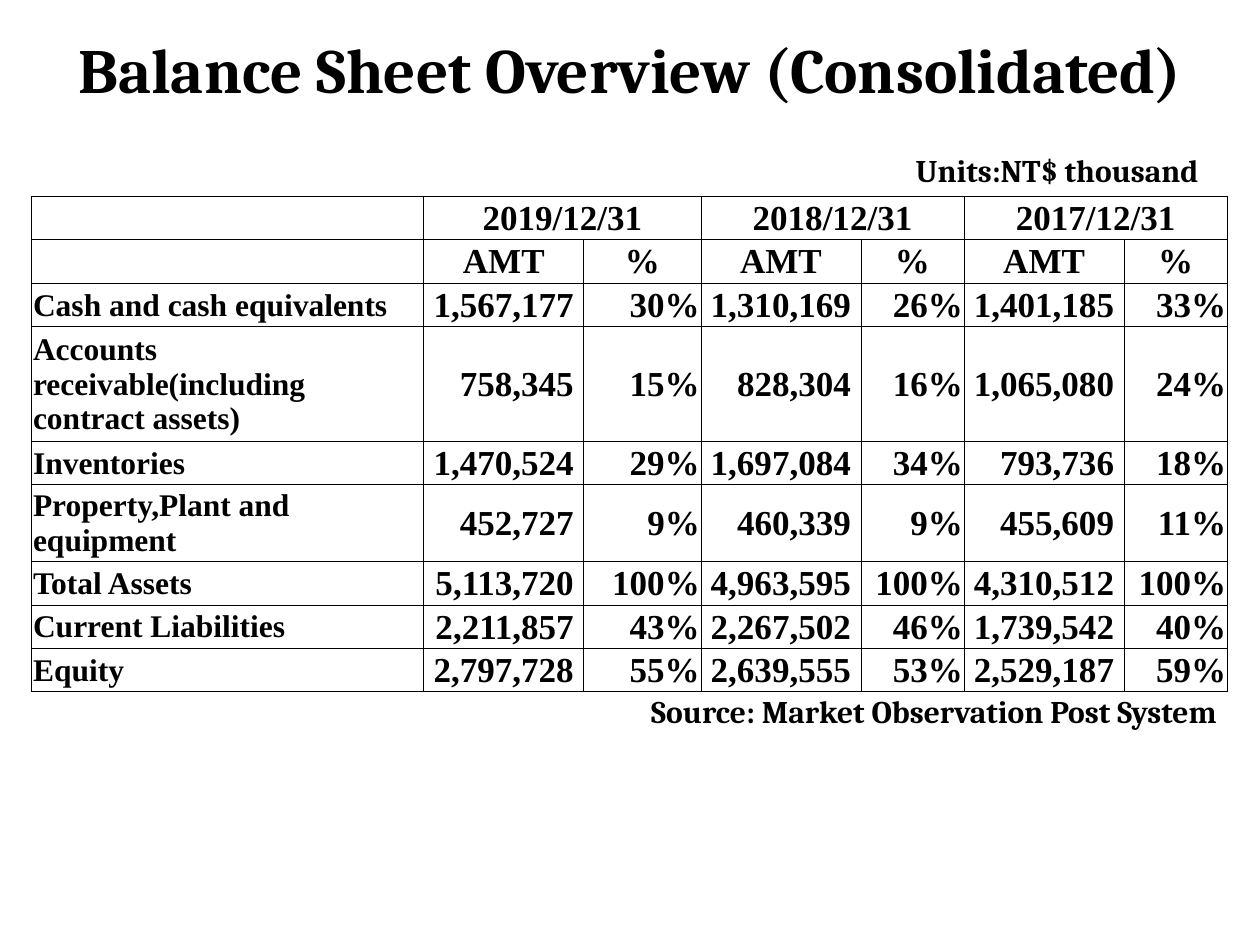
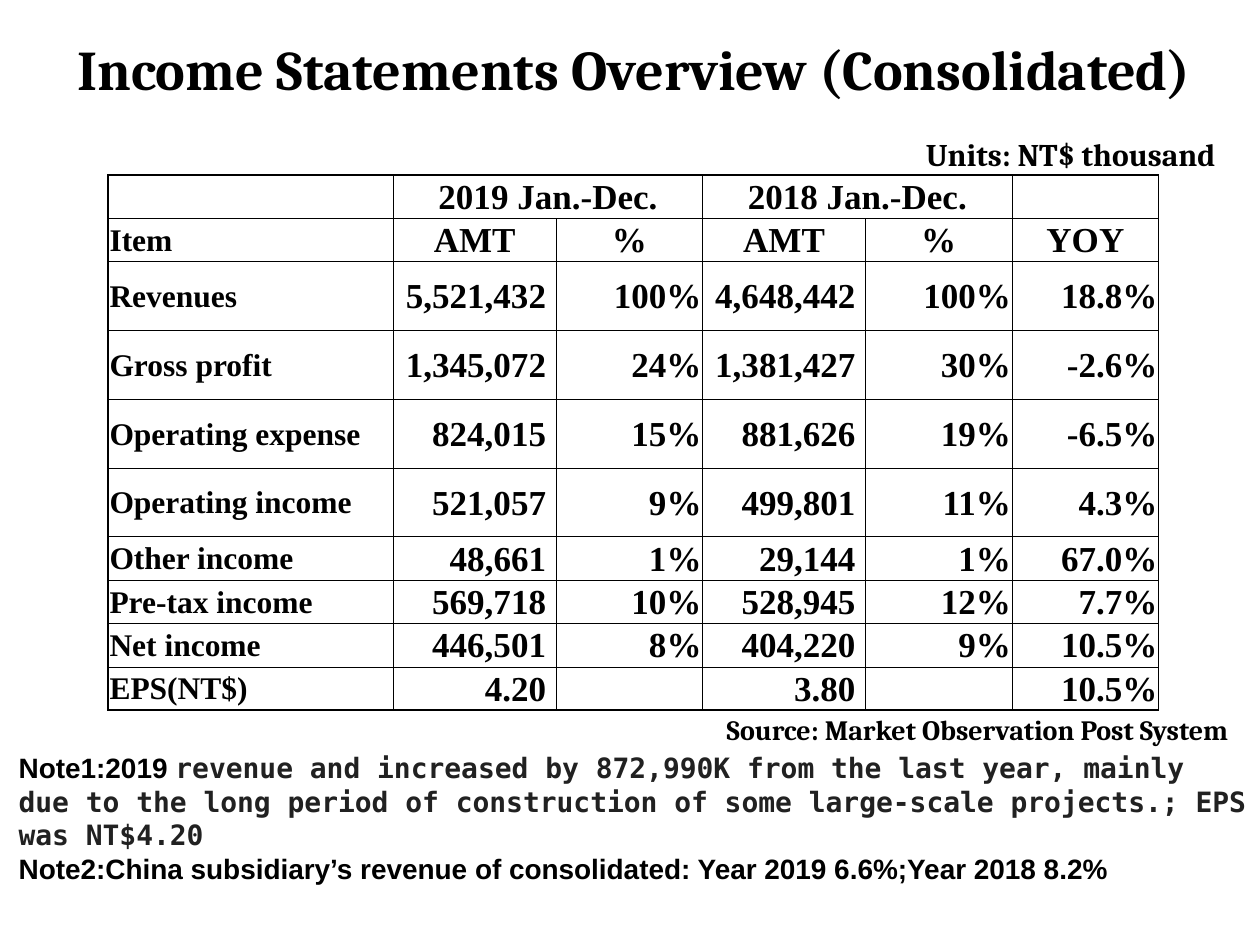
from dataclasses import dataclass
from lxml import etree
from pptx import Presentation
from pptx.dml.color import RGBColor
from pptx.enum import text as t
from pptx.oxml.ns import qn
from pptx.util import Pt


@dataclass(frozen=True)
class Theme:
    ink: str = "000000"
    soft_ink: str = "212121"
    heading: str = "Cambria"
    figures: str = "Times New Roman"
    remark: str = "Arial"
    mono: str = "DejaVu Sans Mono"
    caption: int = 18
    label: int = 18
    figure: int = 20
    small: int = 16
    thin: float = 0.5
    thick: float = 1.5
    inset: float = 0.7
    amount_gap: float = 5.7
    row: float = 24.8


THEME = Theme()
SOURCE = "Source: Market Observation Post System"

BALANCE = {
    "title": ("Balance Sheet Overview (Consolidated)", 36, 691.2),
    "units": ("Units:NT$ thousand", THEME.caption, (516.2, 82.8, 190.8, 28.8)),
    "source": (SOURCE, THEME.caption, (365, 391.7, 370.8, 28.8)),
    "origin": (18.2, 112.2),
    "columns": [224, 91.4, 67, 91.4, 59, 91.4, 59],
    "heights": {3: 65.6, 5: 44},
    "thick_sides": "",
    "periods": ["2019/12/31", "2018/12/31", "2017/12/31"],
    "rows": [
        ["", "AMT", "%", "AMT", "%", "AMT", "%"],
        ["Cash and cash equivalents", "1,567,177", "30%", "1,310,169", "26%", "1,401,185", "33%"],
        ["Accounts receivable(including contract assets)",
         "758,345", "15%", "828,304", "16%", "1,065,080", "24%"],
        ["Inventories", "1,470,524", "29%", "1,697,084", "34%", "793,736", "18%"],
        ["Property,Plant and equipment", "452,727", "9%", "460,339", "9%", "455,609", "11%"],
        ["Total Assets", "5,113,720", "100%", "4,963,595", "100%", "4,310,512", "100%"],
        ["Current Liabilities", "2,211,857", "43%", "2,267,502", "46%", "1,739,542", "40%"],
        ["Equity", "2,797,728", "55%", "2,639,555", "53%", "2,529,187", "59%"],
    ],
}

INCOME = {
    "title": ("Income Statements Overview (Consolidated)", 32, 696.2),
    "units": ("Units: NT$ thousand", THEME.caption, (522, 73.4, 198.7, 28.8)),
    "source": (SOURCE, THEME.small, (408.2, 403.9, 312.5, 26.6)),
    "origin": (61.9, 100.1),
    "columns": [162.9, 93, 83.8, 93, 83.8, 83.8],
    "heights": dict.fromkeys(range(2, 6), 39.3),
    "thick_sides": "LTB",
    "periods": ["2019 Jan.-Dec.", "2018 Jan.-Dec."],
    "rows": [
        ["Item", "AMT", "%", "AMT", "%", "YOY"],
        ["Revenues", "5,521,432", "100%", "4,648,442", "100%", "18.8%"],
        ["Gross profit", "1,345,072", "24%", "1,381,427", "30%", "-2.6%"],
        ["Operating expense", "824,015", "15%", "881,626", "19%", "-6.5%"],
        ["Operating income", "521,057", "9%", "499,801", "11%", "4.3%"],
        ["Other income", "48,661", "1%", "29,144", "1%", "67.0%"],
        ["Pre-tax income", "569,718", "10%", "528,945", "12%", "7.7%"],
        ["Net income", "446,501", "8%", "404,220", "9%", "10.5%"],
        ["EPS(NT$)", "4.20", "", "3.80", "", "10.5%"],
    ],
}

REMARKS_BOX = (3.6, 425.5, 717.1, 108.7)
REMARKS = [
    [("Note1:2019 ", THEME.remark, THEME.ink),
     ("revenue and increased by 872,990K from the last year, mainly due to the long period "
      "of construction of some large-scale projects.; EPS was NT$4.20",
      THEME.mono, THEME.soft_ink)],
    [("Note2:China subsidiary’s revenue of consolidated: Year 2019 6.6%;Year 2018 8.2%",
      THEME.remark, THEME.ink)],
]


def style(font, name, size=None, color=THEME.ink):
    font.name = name
    font.bold = True
    font.color.rgb = RGBColor.from_string(color)
    if size:
        font.size = Pt(size)


def add_title(slide, words, size, width):
    title = slide.shapes.title
    title.left, title.top, title.width, title.height = map(Pt, (14.4, 12.2, width, 54))
    frame = title.text_frame
    frame.text = words
    frame.auto_size = t.MSO_AUTO_SIZE.NONE
    frame.vertical_anchor = t.MSO_ANCHOR.MIDDLE
    frame.paragraphs[0].alignment = t.PP_ALIGN.CENTER
    style(frame.paragraphs[0].font, THEME.heading, size)


def add_frame(slide, box):
    frame = slide.shapes.add_textbox(*map(Pt, box)).text_frame
    frame.word_wrap = True
    return frame


def add_caption(slide, words, size, box):
    line = add_frame(slide, box).paragraphs[0]
    line.text = words
    style(line.font, THEME.heading, size)


def rule_cell(cell, thick_sides):
    props = cell._tc.get_or_add_tcPr()
    for side in "LRTB":
        width = THEME.thick if side in thick_sides else THEME.thin
        rule = etree.SubElement(props, qn(f"a:ln{side}"), w=str(Pt(width)))
        fill = etree.SubElement(rule, qn("a:solidFill"))
        etree.SubElement(fill, qn("a:srgbClr"), val=THEME.ink)
    cell.fill.background()


def fill_cell(cell, words, row, col, is_amount):
    cell.margin_left = cell.margin_top = cell.margin_right = Pt(THEME.inset)
    cell.margin_bottom = 0
    cell.vertical_anchor = t.MSO_ANCHOR.MIDDLE
    line = cell.text_frame.paragraphs[0]
    line.text = words
    if col == 0:
        line.alignment = t.PP_ALIGN.LEFT
    elif row < 2:
        line.alignment = t.PP_ALIGN.CENTER
    else:
        line.alignment = t.PP_ALIGN.RIGHT
        if is_amount:
            cell.margin_right = Pt(THEME.amount_gap)
    style(line.font, THEME.figures, THEME.label if col == 0 else THEME.figure)


def add_statement(slide, sheet):
    columns = sheet["columns"]
    period_row = [""] * len(columns)
    period_row[1:1 + 2 * len(sheet["periods"]):2] = sheet["periods"]
    rows = [period_row] + sheet["rows"]
    heights = [sheet["heights"].get(i, THEME.row) for i in range(len(rows))]
    table = slide.shapes.add_table(
        len(rows), len(columns),
        *map(Pt, (*sheet["origin"], sum(columns), sum(heights)))).table
    table.first_row = table.horz_banding = False
    for column, width in zip(table.columns, columns):
        column.width = Pt(width)
    for r, (values, height) in enumerate(zip(rows, heights)):
        table.rows[r].height = Pt(height)
        for c, words in enumerate(values):
            cell = table.cell(r, c)
            fill_cell(cell, words, r, c, sheet["rows"][0][c] == "AMT")
            edges = {"L": c == 0, "T": r == 0, "B": r == len(rows) - 1}
            rule_cell(cell, [side for side in sheet["thick_sides"] if edges[side]])
    for i in range(len(sheet["periods"])):
        start = 1 + 2 * i
        table.cell(0, start).merge(table.cell(0, start + 1))


def add_remarks(slide):
    frame = add_frame(slide, REMARKS_BOX)
    for i, remark in enumerate(REMARKS):
        line = frame.add_paragraph() if i else frame.paragraphs[0]
        line.font.size = Pt(THEME.small)
        for words, name, color in remark:
            run = line.add_run()
            run.text = words
            style(run.font, name, color=color)


def main():
    deck = Presentation()
    deck.slide_width, deck.slide_height = Pt(720), Pt(540)
    for sheet in (BALANCE, INCOME):
        slide = deck.slides.add_slide(deck.slide_layouts[5])
        add_title(slide, *sheet["title"])
        add_caption(slide, *sheet["units"])
        add_caption(slide, *sheet["source"])
        add_statement(slide, sheet)
    add_remarks(slide)
    deck.save("out.pptx")


if __name__ == "__main__":
    main()
